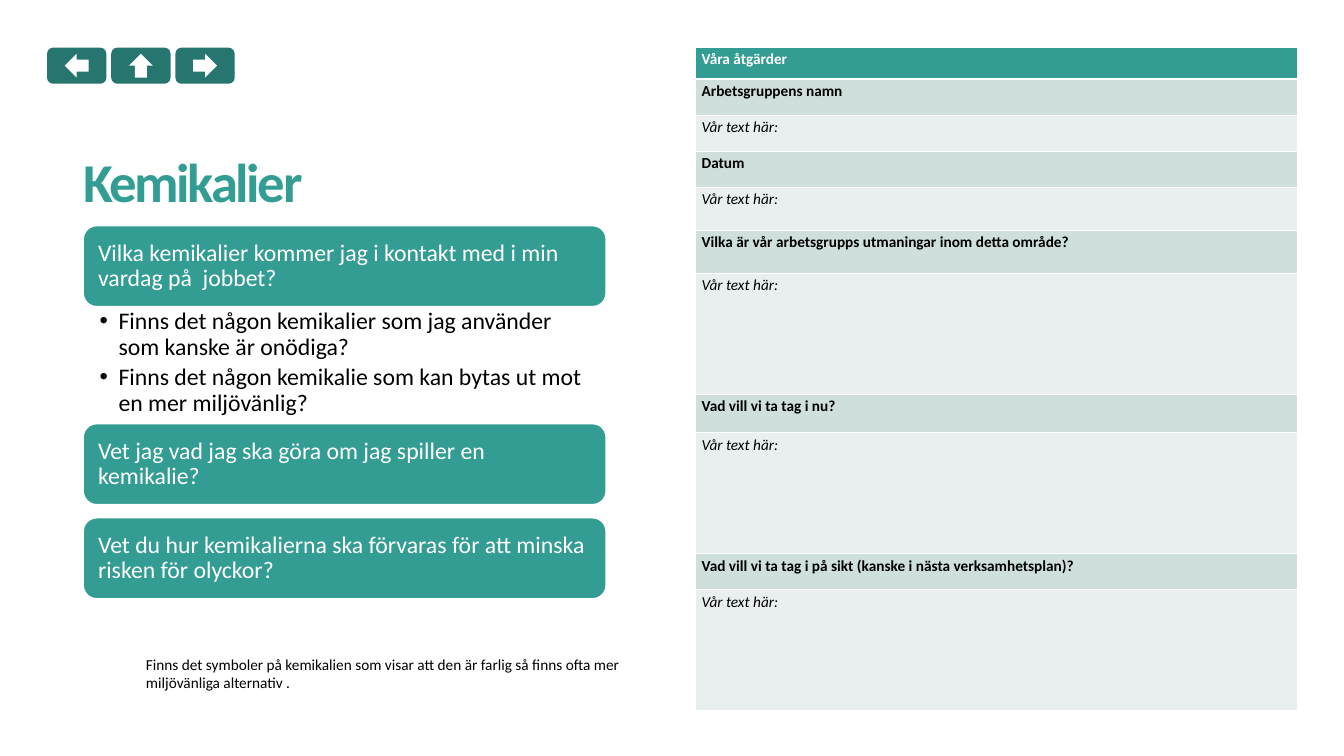
from lxml import etree
from pptx import Presentation
from pptx.dml.color import RGBColor
from pptx.enum.shapes import MSO_SHAPE
from pptx.enum.text import MSO_ANCHOR, MSO_AUTO_SIZE, PP_ALIGN
from pptx.oxml.ns import qn
from pptx.util import Inches, Pt

ROUND, ARROW = MSO_SHAPE.ROUNDED_RECTANGLE, MSO_SHAPE.RIGHT_ARROW
TOP, MIDDLE, BOTTOM = MSO_ANCHOR.TOP, MSO_ANCHOR.MIDDLE, MSO_ANCHOR.BOTTOM
LEFT, FIXED = PP_ALIGN.LEFT, MSO_AUTO_SIZE.NONE

COLORS = {
    "teal": "339D94", "deep": "26766F", "mist": "CEDFDC",
    "pale": "E8EFEE", "white": "FFFFFF", "black": "000000",
}
ANSWER = "Vår text här:"


def color(name):
    return RGBColor.from_string(COLORS[name])


def write(frame, *texts, size=18, ink="black", bold=False, italic=False,
          line=1, after=0, track=0, bullet=False, anchor=TOP, inset=None):
    """Fill a text frame with one paragraph per text."""
    frame.word_wrap = True
    frame.auto_size = FIXED
    frame.vertical_anchor = anchor
    if inset:
        (frame.margin_left, frame.margin_top,
         frame.margin_right, frame.margin_bottom) = map(Inches, inset)
    for i, text in enumerate(texts):
        para = frame.add_paragraph() if i else frame.paragraphs[0]
        para.alignment, para.line_spacing = LEFT, line
        para.space_before, para.space_after = Pt(0), Pt(after)
        if bullet:
            props = para._p.get_or_add_pPr()
            props.set("marL", str(Inches(0.31)))
            props.set("indent", str(-Inches(0.31)))
            etree.SubElement(props, qn("a:buChar")).set("char", "•")
        run = para.add_run()
        run.text = text
        font = run.font
        font.name, font.size = "Calibri", Pt(size)
        font.bold, font.italic = bold, italic
        font.color.rgb = color(ink)
        if track:
            run._r.get_or_add_rPr().set("spc", str(track))


def edge(cell, side, width):
    """Draw a white border on one side of a table cell."""
    line = etree.SubElement(cell._tc.get_or_add_tcPr(), qn("a:ln" + side))
    line.set("w", str(Pt(width)))
    fill = etree.SubElement(line, qn("a:solidFill"))
    etree.SubElement(fill, qn("a:srgbClr")).set("val", COLORS["white"])


class Page:
    def __init__(self, slide):
        self.slide = slide
        self.shapes = slide.shapes

    def holder(self, index, box, *texts, **style):
        item = self.slide.placeholders[index]
        item.left, item.top, item.width, item.height = map(Inches, box)
        write(item.text_frame, *texts, **style)

    def shape(self, kind, box, fill, turn=0):
        item = self.shapes.add_shape(kind, *map(Inches, box))
        item.shadow.inherit = False
        item.fill.solid()
        item.fill.fore_color.rgb = color(fill)
        item.line.fill.background()
        item.rotation = turn
        return item

    def card(self, top, text):
        item = self.shape(ROUND, (1.36, top, 8.56, 1.33), "teal")
        item.line.color.rgb = color("white")
        item.line.width = Pt(2)
        write(item.text_frame, text, size=28, ink="white", line=0.9,
              anchor=MIDDLE, inset=(0.18,) * 4)

    def button(self, left, turn):
        self.shape(ROUND, (left, 0.78, 0.97, 0.59), "deep")
        self.shape(ARROW, (left + 0.29, 0.88, 0.39, 0.39), "white", turn)

    def note(self, box, text):
        item = self.shapes.add_textbox(*map(Inches, box))
        write(item.text_frame, text)

    def table(self, box, rows):
        frame = self.shapes.add_table(len(rows), 1, *map(Inches, box))
        grid = frame.table
        for i, (height, text) in enumerate(rows):
            grid.rows[i].height = Inches(height)
            cell = grid.cell(i, 0)
            answer = text == ANSWER
            fill = "teal" if i == 0 else "pale" if answer else "mist"
            write(cell.text_frame, text, ink="black" if i else "white",
                  bold=not answer, italic=answer)
            for side in "LRTB":
                thick = (i, side) in ((0, "B"), (1, "T"))
                edge(cell, side, 3 if thick else 1)
            cell.fill.solid()
            cell.fill.fore_color.rgb = color(fill)


def main():
    deck = Presentation()
    deck.slide_width, deck.slide_height = Inches(21.99), Inches(12.37)
    page = Page(deck.slides.add_slide(deck.slide_layouts[1]))

    # Title and questions
    page.holder(0, (1.36, 1.34, 8.56, 2.23), "Kemikalier", size=64.5,
                ink="teal", bold=True, line=0.85, track=-280,
                anchor=BOTTOM, inset=(0, 0, 0, 0.08))
    page.card(3.69, "Vilka kemikalier kommer jag i kontakt med i min vardag på  jobbet?")
    page.holder(1, (1.36, 5.02, 8.56, 1.91),
                "Finns det någon kemikalier som jag använder som kanske är onödiga?",
                "Finns det någon kemikalie som kan bytas ut mot en mer miljövänlig?",
                size=28, line=0.9, after=5.6, bullet=True,
                inset=(0.27, 0.04, 0.22, 0.04))
    page.card(6.93, "Vet jag vad jag ska göra om jag spiller en kemikalie?")
    page.card(8.47, "Vet du hur kemikalierna ska förvaras för att minska risken för olyckor?")
    page.note((2.29, 10.67, 8, 0.71),
              "Finns det symboler på kemikalien som visar att den är farlig "
              "så finns ofta mer miljövänliga alternativ .")

    # Navigation: back, up, forward
    for i, turn in enumerate((180, 270, 0)):
        page.button(0.77 + 1.05 * i, turn)

    # Action plan
    page.table((11.38, 0.77, 9.85, 10.85), [
        (0.52, "Våra åtgärder"),
        (0.59, "Arbetsgruppens namn"), (0.59, ANSWER),
        (0.59, "Datum"), (0.71, ANSWER),
        (0.7, "Vilka är vår arbetsgrupps utmaningar inom detta område?"),
        (1.98, ANSWER),
        (0.63, "Vad vill vi ta tag i nu?"), (1.98, ANSWER),
        (0.59, "Vad vill vi ta tag i på sikt (kanske i nästa verksamhetsplan)?"),
        (1.98, ANSWER),
    ])
    deck.save("out.pptx")


if __name__ == "__main__":
    main()
